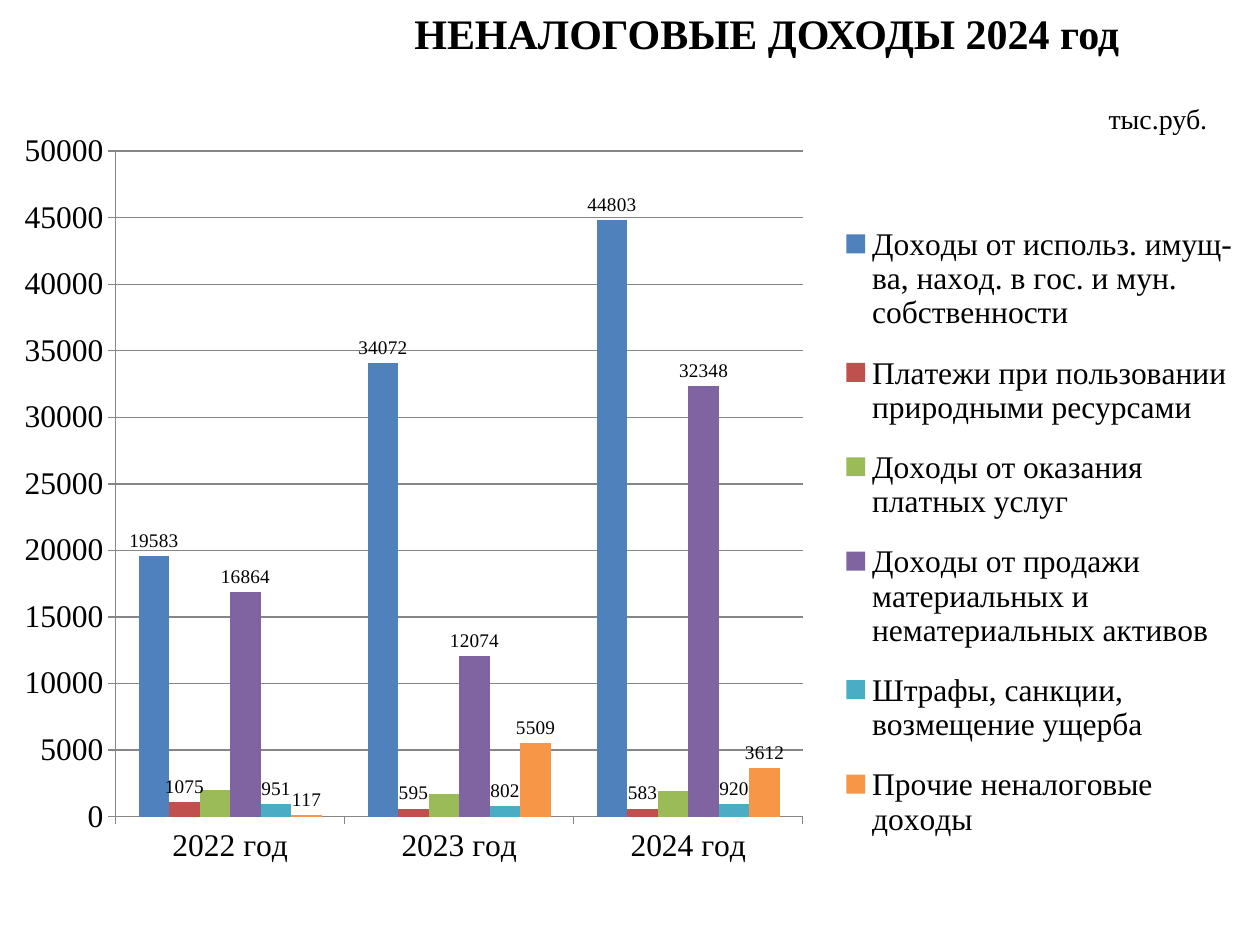
"""Build the slide on non-tax income by year."""
from lxml import etree
from pptx import Presentation
from pptx.chart.data import CategoryChartData
from pptx.dml.color import RGBColor
from pptx.enum.chart import XL_CHART_TYPE, XL_LABEL_POSITION, XL_LEGEND_POSITION, XL_TICK_MARK
from pptx.enum.text import MSO_AUTO_SIZE
from pptx.oxml import parse_xml
from pptx.util import Inches, Pt

COLUMN = XL_CHART_TYPE.COLUMN_CLUSTERED
ABOVE = XL_LABEL_POSITION.OUTSIDE_END
RIGHT = XL_LEGEND_POSITION.RIGHT
OUT = XL_TICK_MARK.OUTSIDE
FIT = MSO_AUTO_SIZE.SHAPE_TO_FIT_TEXT
NS = "http://schemas.openxmlformats.org/drawingml/2006/chart"
FACE, INK, GRID = "Times New Roman", "000000", "868686"


def tint(code):
    return RGBColor.from_string(code)


def place(item, after, marks):
    for old in item.findall(f"{{{NS}}}layout"):
        item.remove(old)
    body = "".join(f'<c:{key} val="{val}"/>' for key, val in marks.items())
    node = parse_xml(f'<c:layout xmlns:c="{NS}"><c:manualLayout>{body}</c:manualLayout></c:layout>')
    if after is None:
        item.insert(0, node)
    else:
        after.addnext(node)


deck = Presentation()
deck.slide_width, deck.slide_height = Inches(10), Inches(7.5)
slide = deck.slides.add_slide(deck.slide_layouts[6])

years = ["2022 год", "2023 год", "2024 год"]
rows = [
    ("Доходы от использ. имущ-ва, наход. в гос. и мун. собственности", (19583, 34072, 44803), "4F81BD", True),
    ("Платежи при пользовании природными ресурсами", (1075, 595, 583), "C0504D", True),
    ("Доходы от оказания платных услуг", (2000, 1700, 1900), "9BBB59", False),
    ("Доходы от продажи материальных и нематериальных активов", (16864, 12074, 32348), "8064A2", True),
    ("Штрафы, санкции, возмещение ущерба", (951, 802, 920), "4BACC6", True),
    ("Прочие неналоговые доходы", (117, 5509, 3612), "F79646", True),
]
data = CategoryChartData()
data.categories = years
for name, vals, code, shown in rows:
    data.add_series(name, vals)

chart = slide.shapes.add_chart(
    COLUMN, 0, Inches(0.94), Inches(9.88), Inches(6.03), data).chart
chart.has_title = False
chart.font.name, chart.font.size = FACE, Pt(18)
chart.font.color.rgb = tint(INK)

plot = chart.plots[0]
plot.gap_width, plot.overlap, plot.vary_by_categories = 150, 0, False
for bars, (name, vals, code, shown) in zip(plot.series, rows):
    bars.format.fill.solid()
    bars.format.fill.fore_color.rgb = tint(code)
    bars.invert_if_negative = False
    if shown:
        tags = bars.data_labels
        tags.show_value, tags.position = True, ABOVE
        tags.font.name, tags.font.size = FACE, Pt(11)
        tags.font.color.rgb = tint(INK)

scale = chart.value_axis
scale.minimum_scale, scale.maximum_scale, scale.major_unit = 0, 50000, 5000
scale.has_major_gridlines = True
for axis in (scale, chart.category_axis):
    axis.major_tick_mark = OUT
for part in (scale, chart.category_axis, scale.major_gridlines):
    part.format.line.color.rgb = tint(GRID)
    part.format.line.width = Pt(0.75)

chart.has_legend = True
key = chart.legend
key.position, key.include_in_layout = RIGHT, False
area = chart.element.find(f".//{{{NS}}}plotArea")
place(area, None, dict(layoutTarget="inner", xMode="edge", yMode="edge",
                       x=0.093, y=0.043, w=0.552, h=0.876))
side = chart.element.find(f".//{{{NS}}}legendPos")
place(side.getparent(), side, dict(xMode="edge", yMode="edge",
                                  x=0.67, y=0.11, w=0.33, h=0.87))

texts = [
    ("НЕНАЛОГОВЫЕ ДОХОДЫ 2024 год", (3.19, 0.01, 5.85, 0.5), {"size": Pt(24), "bold": True}),
    ("тыс.руб.", (8.7, 0.76, 1, 0.37), {"size": Pt(16), "bold": False}),
]
for words, spot, style in texts:
    frame = slide.shapes.add_textbox(*map(Inches, spot)).text_frame
    frame.word_wrap, frame.auto_size = False, FIT
    run = frame.paragraphs[0].add_run()
    run.text = words
    for trait, val in {"name": FACE, **style}.items():
        setattr(run.font, trait, val)
    run.font.color.rgb = tint(INK)

deck.save("out.pptx")
